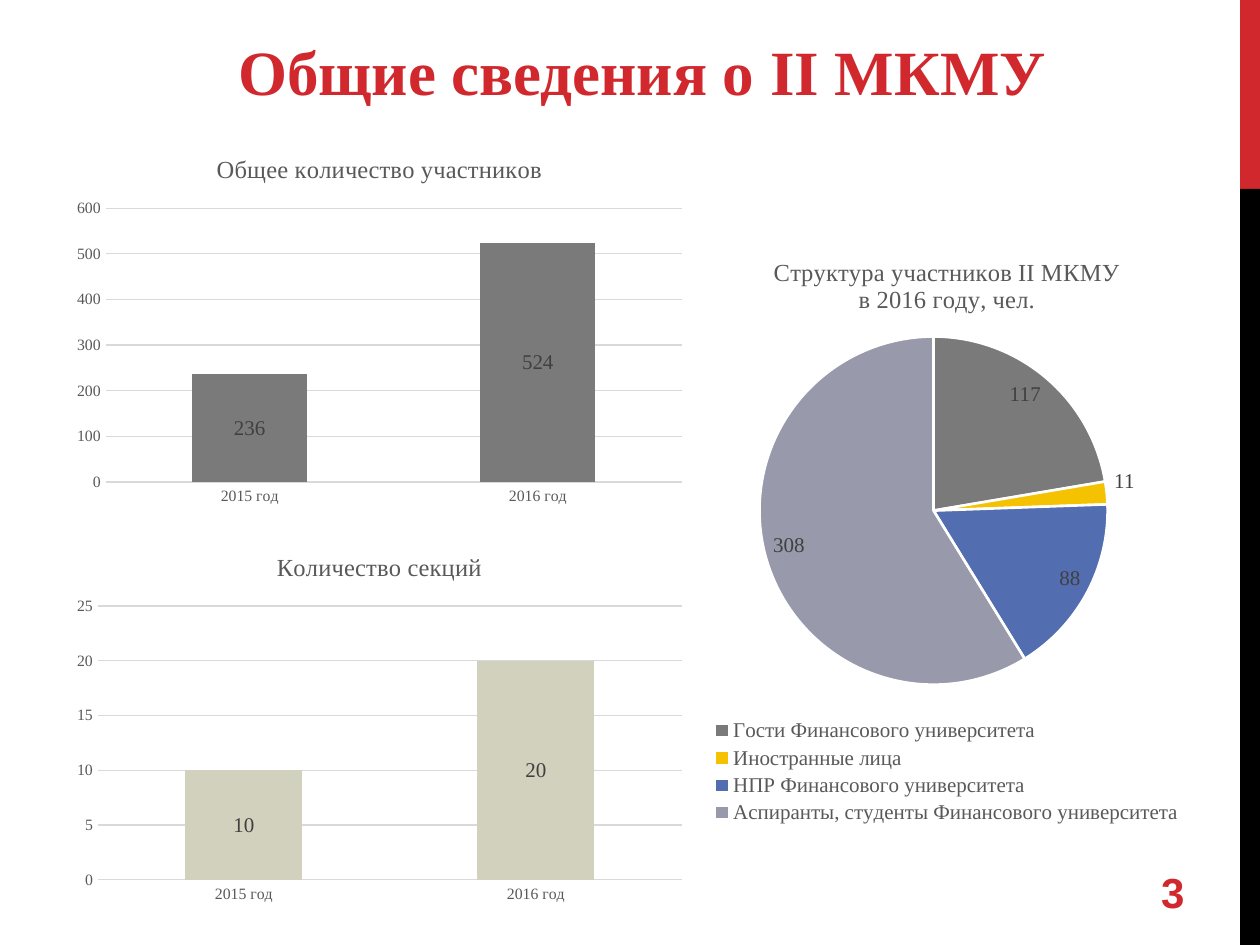
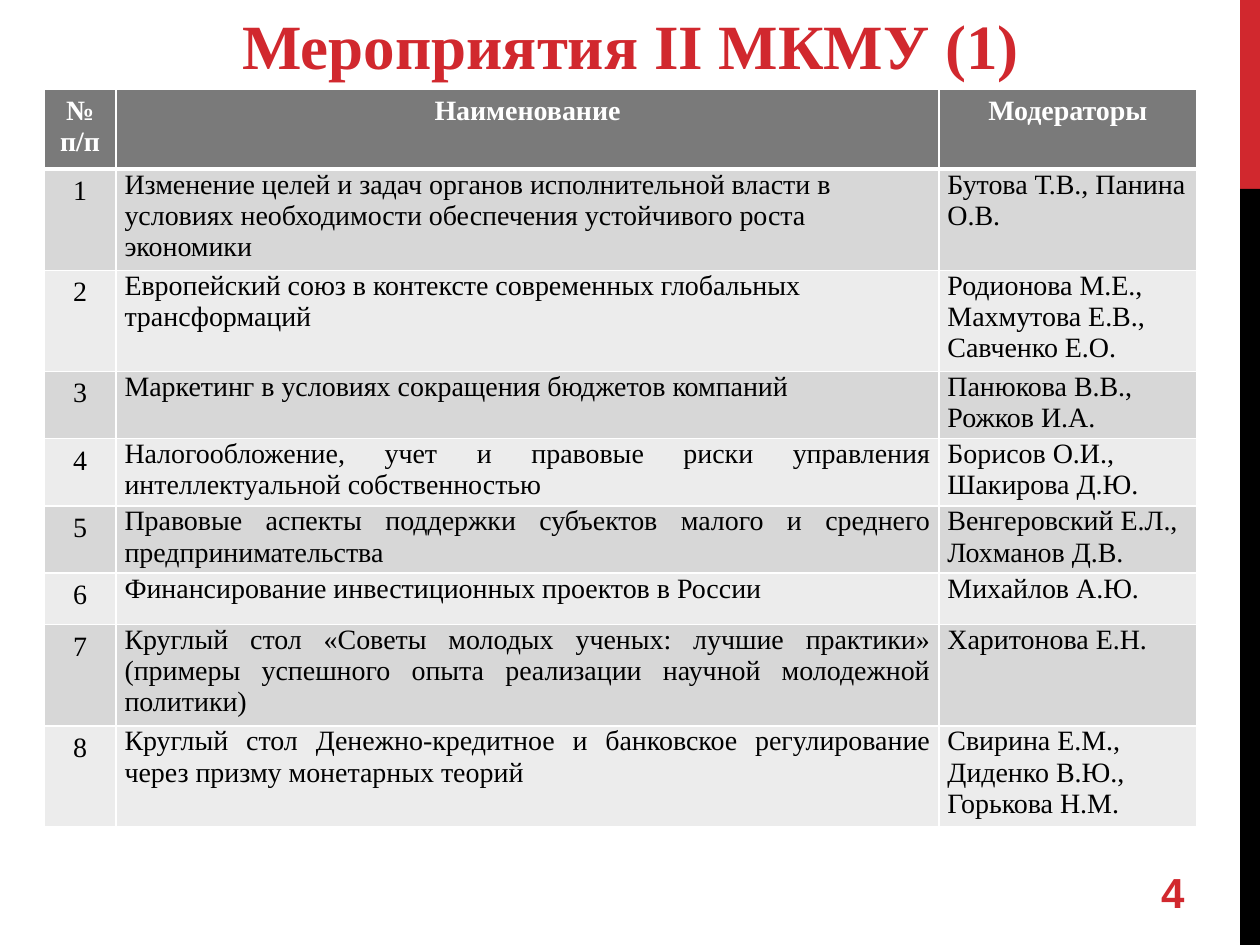
from dataclasses import dataclass

from pptx import Presentation
from pptx.chart.data import CategoryChartData
from pptx.dml.color import RGBColor
from pptx.enum import chart as charts
from pptx.enum import shapes, text
from pptx.oxml import parse_xml
from pptx.oxml import ns
from pptx.util import Cm, Pt


@dataclass(frozen=True)
class Theme:
    red: str = "D1282E"
    black: str = "000000"
    white: str = "FFFFFF"
    gray: str = "7A7A7A"
    sand: str = "D2D1BE"
    yellow: str = "F5C201"
    blue: str = "526DB0"
    lilac: str = "989AAC"
    grid: str = "D9D9D9"
    chart_text: str = "595959"
    label_text: str = "404040"
    row_bands: tuple = ("D7D7D7", "ECECEC")
    serif: str = "Times New Roman"
    sans: str = "Arial"
    title_size: int = 36
    page_size: int = 24
    table_size: int = 16
    chart_title_size: int = 14
    label_size: int = 12
    axis_size: int = 9


THEME = Theme()
ALIGN = text.PP_ALIGN
YEARS = ("2015 год", "2016 год")

PARTICIPANTS = (
    ("Гости Финансового университета", 117, THEME.gray),
    ("Иностранные лица", 11, THEME.yellow),
    ("НПР Финансового университета", 88, THEME.blue),
    ("Аспиранты, студенты Финансового университета", 308, THEME.lilac),
)

# Event name, moderators, name alignment, row height in cm
EVENTS = (
    ("Изменение целей и задач органов исполнительной власти в условиях "
     "необходимости обеспечения устойчивого роста экономики",
     "Бутова Т.В., Панина О.В.", ALIGN.LEFT, 2.04),
    ("Европейский союз в контексте современных глобальных трансформаций",
     "Родионова М.Е., Махмутова Е.В.,\nСавченко Е.О.", ALIGN.LEFT, 2.04),
    ("Маркетинг в условиях сокращения бюджетов компаний",
     "Панюкова В.В., Рожков И.А.", ALIGN.JUSTIFY, 1.35),
    ("Налогообложение, учет и правовые риски управления интеллектуальной "
     "собственностью",
     "Борисов О.И., Шакирова Д.Ю.", ALIGN.JUSTIFY, 1.35),
    ("Правовые аспекты поддержки субъектов малого и среднего "
     "предпринимательства",
     "Венгеровский Е.Л., Лохманов Д.В.", ALIGN.JUSTIFY, 1.35),
    ("Финансирование инвестиционных проектов в России",
     "Михайлов А.Ю.", ALIGN.JUSTIFY, 1.04),
    ("Круглый стол «Советы молодых ученых: лучшие практики» (примеры "
     "успешного опыта реализации научной молодежной политики)",
     "Харитонова Е.Н.", ALIGN.JUSTIFY, 2.04),
    ("Круглый стол Денежно-кредитное и банковское регулирование через "
     "призму монетарных теорий",
     "Свирина Е.М., Диденко В.Ю., Горькова Н.М.", ALIGN.JUSTIFY, 2.04),
)


def box(*lengths):
    return [Cm(length) for length in lengths]


def style_font(font, size, color, bold=False, name=THEME.serif):
    font.name = name
    font.size = Pt(size)
    font.bold = bold
    font.color.rgb = RGBColor.from_string(color)


def write_text(frame, content, align=None, **font_format):
    """Fill a text frame; each line of content becomes a paragraph."""
    frame.text = content
    for paragraph in frame.paragraphs:
        if align is not None:
            paragraph.alignment = align
        for run in paragraph.runs:
            style_font(run.font, **font_format)


def set_fill(fill, color):
    fill.solid()
    fill.fore_color.rgb = RGBColor.from_string(color)


def add_band(slide, top, height, color):
    band = slide.shapes.add_shape(
        shapes.MSO_SHAPE.RECTANGLE, *box(25, top, 0.4, height))
    band.shadow.inherit = False
    set_fill(band.fill, color)
    band.line.fill.background()


def add_title_slide(presentation, title, page, left, top):
    """Add a slide with the side bands, a title and a page number."""
    slide = presentation.slides.add_slide(presentation.slide_layouts[5])
    add_band(slide, 0, 3.81, THEME.red)
    add_band(slide, 3.81, 15.24, THEME.black)

    heading = slide.shapes.title
    heading.left, heading.top, heading.width, heading.height = box(
        left, top, 24.41, 1.8)
    heading.text_frame.auto_size = text.MSO_AUTO_SIZE.NONE
    heading.text_frame.vertical_anchor = text.MSO_ANCHOR.TOP
    write_text(heading.text_frame, title, align=ALIGN.CENTER,
               size=THEME.title_size, color=THEME.red, bold=True)

    number = slide.shapes.add_textbox(*box(18.21, 17.35, 5.92, 1.27)).text_frame
    number.word_wrap = True
    number.vertical_anchor = text.MSO_ANCHOR.MIDDLE
    write_text(number, str(page), align=ALIGN.RIGHT, size=THEME.page_size,
               color=THEME.red, bold=True, name=THEME.sans)
    return slide


def add_titled_chart(slide, kind, place, title, series_name, categories, values):
    data = CategoryChartData()
    data.categories = categories
    data.add_series(series_name, values)
    chart = slide.shapes.add_chart(kind, *box(*place), data).chart
    style_font(chart.font, 10, THEME.black)
    chart.has_title = True
    write_text(chart.chart_title.text_frame, title,
               size=THEME.chart_title_size, color=THEME.chart_text)
    chart.chart_title.include_in_layout = False
    chart.has_legend = False

    plot = chart.plots[0]
    plot.has_data_labels = True
    plot.data_labels.show_value = True
    plot.data_labels.show_percentage = False
    style_font(plot.data_labels.font, THEME.label_size, THEME.label_text)
    return chart


def add_column_chart(slide, kind, top, title, values, color):
    chart = add_titled_chart(slide, kind, (1.3, top, 12.7, 7.62), title, title,
                             YEARS, values)
    plot = chart.plots[0]
    plot.gap_width = 150
    plot.vary_by_categories = False
    plot.data_labels.position = charts.XL_LABEL_POSITION.CENTER
    set_fill(plot.series[0].format.fill, color)
    for axis in (chart.category_axis, chart.value_axis):
        axis.major_tick_mark = charts.XL_TICK_MARK.NONE
        axis.minor_tick_mark = charts.XL_TICK_MARK.NONE
        axis.format.line.fill.background()
        style_font(axis.tick_labels.font, THEME.axis_size, THEME.chart_text)
    grid_line = chart.value_axis.major_gridlines.format.line
    grid_line.width = Pt(0.75)
    grid_line.color.rgb = RGBColor.from_string(THEME.grid)


def place_plot(chart, **fractions):
    """Fix the inner plot area as fractions of the chart's size."""
    area = chart.plots[0]._element.getparent()
    for layout in area.findall(ns.qn("c:layout")):
        area.remove(layout)
    sizes = "".join(f'<c:{key} val="{value}"/>'
                    for key, value in fractions.items())
    area.insert(0, parse_xml(
        f'<c:layout {ns.nsdecls("c")}><c:manualLayout>'
        '<c:layoutTarget val="inner"/><c:xMode val="edge"/>'
        f'<c:yMode val="edge"/>{sizes}</c:manualLayout></c:layout>'))


def add_participants_pie(slide):
    names, counts, colors = zip(*PARTICIPANTS)
    chart = add_titled_chart(
        slide, charts.XL_CHART_TYPE.PIE, (13.69, 4.72, 10.8, 11.99),
        "Структура участников II МКМУ\nв 2016 году, чел.", "Series 1",
        names, counts)
    chart.has_legend = True
    chart.legend.position = charts.XL_LEGEND_POSITION.BOTTOM
    chart.legend.include_in_layout = False
    style_font(chart.legend.font, THEME.label_size, THEME.chart_text)
    place_plot(chart, x=0.15, y=0.17, w=0.65, h=0.59)

    plot = chart.plots[0]
    plot.vary_by_categories = True
    plot.data_labels.position = charts.XL_LABEL_POSITION.INSIDE_END
    points = plot.series[0].points
    for index, color in enumerate(colors):
        point = points[index]
        set_fill(point.format.fill, color)
        point.format.line.width = Pt(1.5)
        point.format.line.color.rgb = RGBColor.from_string(THEME.white)
        is_narrow = counts[index] < 20
        label = point.data_label
        style_font(label.font, THEME.label_size, THEME.label_text)
        label.position = (charts.XL_LABEL_POSITION.OUTSIDE_END if is_narrow
                          else charts.XL_LABEL_POSITION.INSIDE_END)


def add_borders(cell, bottom_width):
    widths = {"lnL": 1, "lnR": 1, "lnT": 1, "lnB": bottom_width}
    properties = cell._tc.get_or_add_tcPr()
    for side, width in widths.items():
        properties.append(parse_xml(
            f'<a:{side} {ns.nsdecls("a")} w="{Pt(width)}"><a:solidFill>'
            f'<a:srgbClr val="{THEME.white}"/></a:solidFill></a:{side}>'))


def fill_cell(cell, content, fill, align, color=THEME.black, bold=False,
              bottom_width=1):
    add_borders(cell, bottom_width)
    set_fill(cell.fill, fill)
    write_text(cell.text_frame, content, align=align, size=THEME.table_size,
               color=color, bold=bold)


def add_events_table(slide):
    heights = [1.55] + [event[-1] for event in EVENTS]
    widths = (1.45, 16.59, 5.19)
    table = slide.shapes.add_table(
        len(heights), len(widths),
        *box(0.89, 1.8, sum(widths), sum(heights))).table
    for column, width in zip(table.columns, widths):
        column.width = Cm(width)
    for row, height in zip(table.rows, heights):
        row.height = Cm(height)

    for column, header in enumerate(("№ п/п", "Наименование", "Модераторы")):
        fill_cell(table.cell(0, column), header, THEME.gray, ALIGN.CENTER,
                  color=THEME.white, bold=True, bottom_width=3)
    for row, (name, moderators, name_align, _) in enumerate(EVENTS, 1):
        fill = THEME.row_bands[(row - 1) % 2]
        fill_cell(table.cell(row, 0), str(row), fill, ALIGN.CENTER)
        for column, content, align in ((1, name, name_align),
                                       (2, moderators, ALIGN.LEFT)):
            cell = table.cell(row, column)
            cell.margin_left = cell.margin_right = Cm(0.17)
            cell.margin_top = cell.margin_bottom = 0
            fill_cell(cell, content, fill, align)


def main():
    presentation = Presentation()
    presentation.slide_width, presentation.slide_height = box(25.4, 19.05)

    overview = add_title_slide(presentation, "Общие сведения о II МКМУ",
                               page=3, left=0.74, top=0.53)
    add_column_chart(overview, charts.XL_CHART_TYPE.COLUMN_STACKED, 2.72,
                     "Общее количество участников", (236, 524), THEME.gray)
    add_column_chart(overview, charts.XL_CHART_TYPE.COLUMN_CLUSTERED, 10.74,
                     "Количество секций", (10, 20), THEME.sand)
    add_participants_pie(overview)

    events = add_title_slide(presentation, "Мероприятия II МКМУ (1)",
                             page=4, left=0.51, top=0)
    add_events_table(events)

    presentation.save("out.pptx")


if __name__ == "__main__":
    main()
